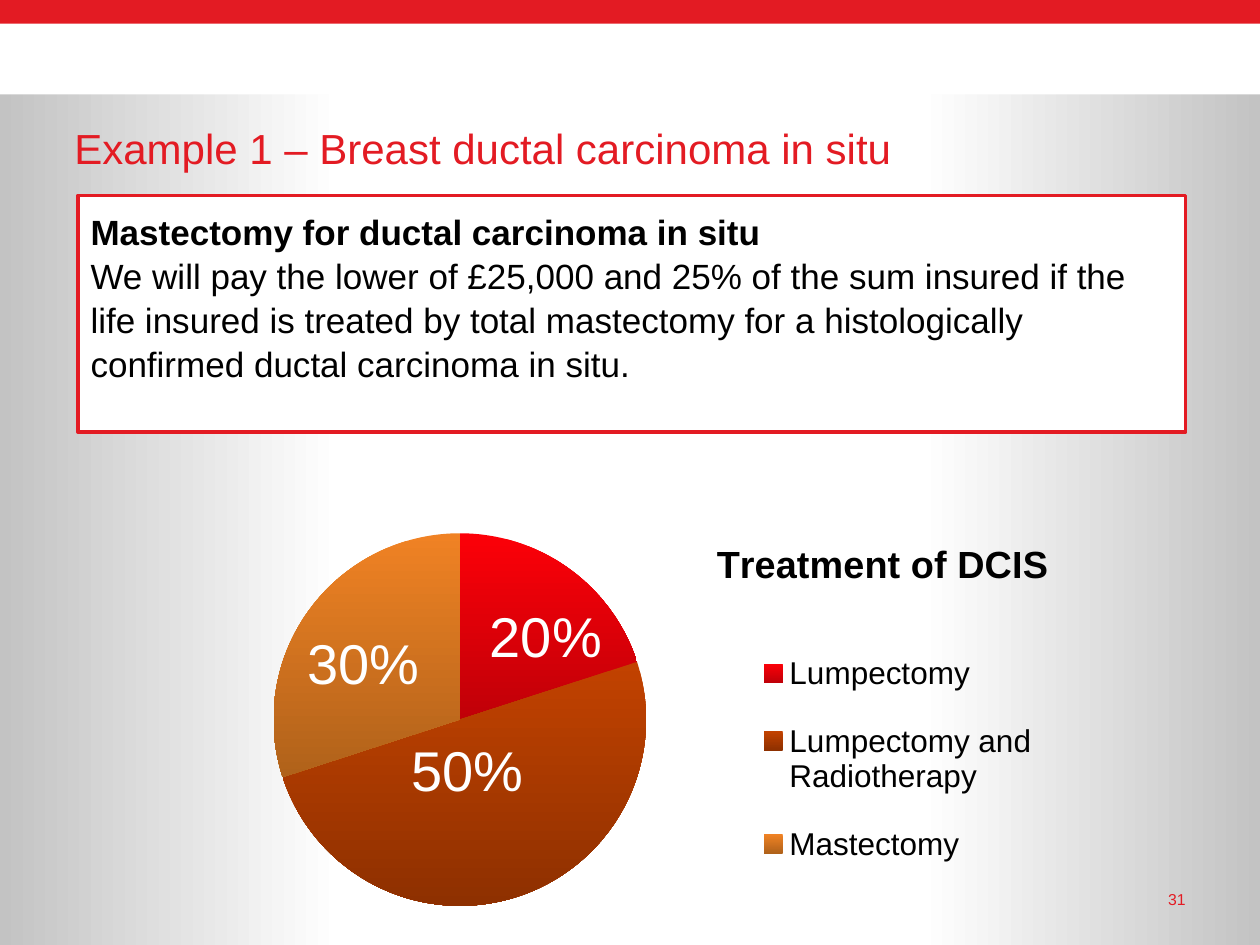
from copy import deepcopy

from lxml import etree
from pptx import Presentation
from pptx import util as u
from pptx.chart.data import CategoryChartData
from pptx.dml.color import RGBColor
from pptx.enum import chart as charts, shapes, text
from pptx.oxml.ns import qn

RED, WHITE, BLACK = "E31B23", "FFFFFF", "000000"
FONT = "Arial"


def color(value):
    return RGBColor.from_string(value)


def style_font(font, size, value, bold=False):
    font.name, font.size, font.bold = FONT, u.Pt(size), bold
    font.color.rgb = color(value)


def set_gradient(fill, stops, angle):
    fill.gradient_angle = angle
    for stop, (position, value) in zip(fill.gradient_stops, stops):
        stop.position = position
        stop.color.rgb = color(value)


def set_layout(parent, index, **values):
    for old in parent.findall(qn("c:layout")):
        parent.remove(old)
    layout = etree.Element(qn("c:layout"))
    manual = etree.SubElement(layout, qn("c:manualLayout"))
    for name, value in values.items():
        etree.SubElement(manual, qn(f"c:{name}")).set("val", str(value))
    parent.insert(index, layout)


def add_background(slide):
    fill = slide.background.fill
    fill.gradient()
    stop_list = next(slide.element.iter(qn("a:gsLst")))
    for stop in list(stop_list):
        stop_list.append(deepcopy(stop))
    stops = [(0, "C3C3C3"), (0.27, WHITE), (0.73, WHITE), (1, "C3C3C3")]
    set_gradient(fill, stops, 0)


def add_box(slide, box, fill, line=None):
    shape = slide.shapes.add_shape(shapes.MSO_SHAPE.RECTANGLE, *map(u.Inches, box))
    shape.shadow.inherit = False
    shape.fill.solid()
    shape.fill.fore_color.rgb = color(fill)
    if line:
        shape.line.color.rgb = color(line)
        shape.line.width = u.Pt(2)
    else:
        shape.line.fill.background()
    return shape


def add_header(slide, box):
    left, top, width, height = box
    add_box(slide, box, WHITE)
    add_box(slide, (left, top, width, height / 4), RED)


def add_label(slide, box, label, size, top_inset=0, align=text.PP_ALIGN.LEFT):
    frame = slide.shapes.add_textbox(*map(u.Inches, box)).text_frame
    frame.word_wrap = True
    frame.margin_left = frame.margin_right = frame.margin_bottom = 0
    frame.margin_top = u.Inches(top_inset)
    frame.text = label
    paragraph = frame.paragraphs[0]
    paragraph.alignment = align
    style_font(paragraph.runs[0].font, size, RED)


def add_definition(slide, box, heading, body):
    frame = add_box(slide, box, WHITE, RED).text_frame
    frame.word_wrap = True
    frame.vertical_anchor = text.MSO_ANCHOR.TOP
    frame.margin_left = frame.margin_right = u.Inches(0.1)
    frame.margin_top = frame.margin_bottom = u.Inches(0.1)
    frame.text = f"{heading}\n{body}"
    for paragraph, bold in zip(frame.paragraphs, (True, False)):
        paragraph.alignment = text.PP_ALIGN.LEFT
        paragraph.line_spacing = 1.05
        style_font(paragraph.runs[0].font, 20, BLACK, bold)


def add_treatment_chart(slide, box):
    title = "Treatment of DCIS"
    slices = [
        ("Lumpectomy", 20, "FC0008", "C00008", 0.03, -0.01),
        ("Lumpectomy and Radiotherapy", 50, "C24200", "8E3000", -0.02, -0.06),
        ("Mastectomy", 30, "F08224", "B0621A", -0.02, 0),
    ]
    data = CategoryChartData()
    data.categories = [item[0] for item in slices]
    data.add_series(title, [item[1] for item in slices])
    chart = slide.shapes.add_chart(
        charts.XL_CHART_TYPE.PIE, *map(u.Inches, box), data
    ).chart
    style_font(chart.font, 18, BLACK)

    chart.has_title = True
    chart.chart_title.text_frame.text = title
    run = chart.chart_title.text_frame.paragraphs[0].runs[0]
    style_font(run.font, 21.6, BLACK, True)
    chart.has_legend = True
    chart.legend.position = charts.XL_LEGEND_POSITION.RIGHT
    chart.legend.include_in_layout = False
    style_font(chart.legend.font, 18, BLACK)

    plot = chart.plots[0]
    plot.vary_by_categories = True
    plot.has_data_labels = True
    labels = plot.data_labels
    labels.show_percentage, labels.show_value = True, False
    style_font(labels.font, 32, WHITE)
    for index, (_, _, upper, lower, _, _) in enumerate(slices):
        point = plot.series[0].points[index]
        point.format.fill.gradient()
        set_gradient(point.format.fill, [(0, upper), (1, lower)], 270)
        point.format.line.fill.background()
        style_font(point.data_label.font, 32, WHITE)
        point.data_label.position = charts.XL_LABEL_POSITION.CENTER

    element = chart.element
    for label, item in zip(element.iter(qn("c:dLbl")), slices):
        label.find(qn("c:showVal")).set("val", "0")
        label.find(qn("c:showPercent")).set("val", "1")
        set_layout(label, 1, x=item[4], y=item[5])
    edges = {"xMode": "edge", "yMode": "edge"}
    set_layout(next(element.iter(qn("c:title"))), 1, **edges, x=0.61, y=0.25)
    set_layout(next(element.iter(qn("c:legend"))), 1, **edges,
               x=0.64, y=0.4, w=0.3, h=0.45)
    set_layout(next(element.iter(qn("c:plotArea"))), 0, layoutTarget="inner", **edges,
               x=0.19, y=0.25, w=0.36, h=0.62)


def main():
    presentation = Presentation()
    presentation.slide_width = u.Inches(10)
    presentation.slide_height = u.Inches(7.5)
    slide = presentation.slides.add_slide(presentation.slide_layouts[6])
    add_background(slide)
    add_header(slide, (0, 0, 10, 0.75))
    add_label(slide, (8.86, 7.06, 0.55, 0.24), "31", 9, align=text.PP_ALIGN.RIGHT)
    add_label(slide, (0.59, 0.92, 8.82, 0.55),
              "Example 1 – Breast ductal carcinoma in situ", 24, 0.05)
    add_definition(
        slide, (0.62, 1.55, 8.79, 1.88),
        "Mastectomy for ductal carcinoma in situ",
        "We will pay the lower of £25,000 and 25% of the sum insured if the life "
        "insured is treated by total mastectomy for a histologically confirmed "
        "ductal carcinoma in situ.",
    )
    add_treatment_chart(slide, (0.59, 3.04, 8.27, 4.77))
    presentation.save("out.pptx")


if __name__ == "__main__":
    main()
